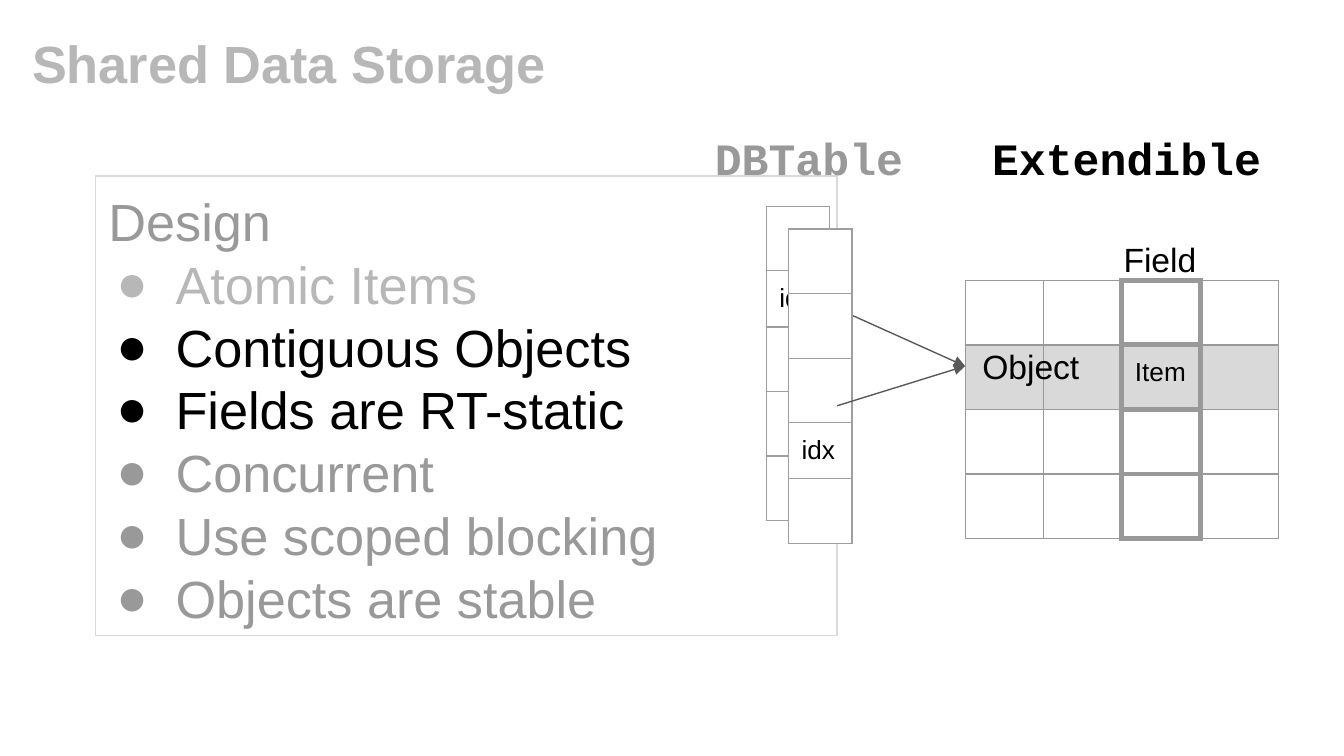
"""Build the Shared Data Storage slide with its design list and table diagram."""
from lxml import etree
from pptx import Presentation
from pptx.dml.color import RGBColor
from pptx.enum.shapes import MSO_CONNECTOR, MSO_SHAPE
from pptx.enum.text import MSO_ANCHOR, PP_ALIGN
from pptx.oxml.ns import qn
from pptx.util import Cm, Pt

STRAIGHT, RECTANGLE = MSO_CONNECTOR.STRAIGHT, MSO_SHAPE.RECTANGLE
TOP, MIDDLE = MSO_ANCHOR.TOP, MSO_ANCHOR.MIDDLE
LEFT, RIGHT = PP_ALIGN.LEFT, PP_ALIGN.RIGHT
BLACK, GRAY, PALE, LIGHT = "000000", "999999", "B7B7B7", "D9D9D9"
INDEX_LINE, ARROW_LINE, WHITE = "9E9E9E", "595959", "FFFFFF"
THIN, THICK = 0.75, 3
MARGIN, CELL_BOTTOM = 0.25, 0.19

TITLE = "Shared Data Storage"
DESIGN_HEADING = "Design"
DESIGN_POINTS = [
    ("Atomic Items", PALE),
    ("Contiguous Objects", BLACK),
    ("Fields are RT-static", BLACK),
    ("Concurrent", GRAY),
    ("Use scoped blocking", GRAY),
    ("Objects are stable", GRAY),
]
OBJECT_ROWS = [["", "", "", ""], ["", "", "Item", ""], ["", "", "", ""], ["", "", "", ""]]
OBJECT_ROW, FIELD_COLUMN = 1, 2
BACK_INDEX = ["", "idx", "", "", ""]
FRONT_INDEX = ["", "", "", "idx", ""]
ROW_HEIGHT, INDEX_ROW_HEIGHT = 1.22, 1.06
FIELD_WIDTH, INDEX_WIDTH = 1.48, 1.2


def rgb(color):
    return RGBColor.from_string(color)


def write(frame, text, size=18, color=BLACK, font="Arial", bold=False, align=LEFT):
    first = frame.paragraphs[0]
    paragraph = frame.add_paragraph() if first.runs else first
    paragraph.alignment = align
    run = paragraph.add_run()
    run.text = text
    run.font.size, run.font.name, run.font.bold = Pt(size), font, bold
    run.font.color.rgb = rgb(color)
    return paragraph


def set_margins(holder, bottom=MARGIN):
    holder.margin_left = holder.margin_right = holder.margin_top = Cm(MARGIN)
    holder.margin_bottom = Cm(bottom)


def add_label(slide, text, left, top, width, height, anchor=TOP, **style):
    label = slide.shapes.add_textbox(Cm(left), Cm(top), Cm(width), Cm(height))
    frame = label.text_frame
    frame.word_wrap = True
    frame.vertical_anchor = anchor
    set_margins(frame)
    write(frame, text, **style)
    return label


def add_bullet(paragraph, color):
    properties = paragraph._p.get_or_add_pPr()
    properties.set("marL", str(Cm(1.27)))
    properties.set("indent", str(Cm(-1.12)))
    bullet_color = etree.SubElement(properties, qn("a:buClr"))
    etree.SubElement(bullet_color, qn("a:srgbClr"), val=color)
    etree.SubElement(properties, qn("a:buFont"), typeface="Arial")
    etree.SubElement(properties, qn("a:buChar"), char="●")


def set_borders(cell, color, thick_sides):
    properties = cell._tc.get_or_add_tcPr()
    for position, side in enumerate("LRTB"):
        width = THICK if side in thick_sides else THIN
        border = etree.Element(qn(f"a:ln{side}"), w=str(Pt(width)))
        fill = etree.SubElement(border, qn("a:solidFill"))
        etree.SubElement(fill, qn("a:srgbClr"), val=color)
        properties.insert(position, border)


def add_grid(slide, rows, left, top, column_width, line, fill_of, thick_of):
    heights = [INDEX_ROW_HEIGHT if "idx" in row else ROW_HEIGHT for row in rows]
    columns = len(rows[0])
    frame = slide.shapes.add_table(len(rows), columns, Cm(left), Cm(top),
                                   Cm(column_width * columns), Cm(sum(heights)))
    grid = frame.table
    grid.first_row = grid.horz_banding = False
    for column in grid.columns:
        column.width = Cm(column_width)
    for r, (row, height) in enumerate(zip(rows, heights)):
        grid.rows[r].height = Cm(height)
        for c, text in enumerate(row):
            cell = grid.cell(r, c)
            set_margins(cell, bottom=CELL_BOTTOM)
            if text:
                write(cell.text_frame, text, size=14)
            fill = fill_of(r)
            if fill:
                cell.fill.solid()
                cell.fill.fore_color.rgb = rgb(fill)
            else:
                cell.fill.background()
            set_borders(cell, line, thick_of(c))


def add_index(slide, entries, left, top, fill):
    add_grid(slide, [[entry] for entry in entries], left, top, INDEX_WIDTH,
             INDEX_LINE, lambda row: fill, lambda column: "")


def add_arrow(slide, left, top, target):
    arrow = slide.shapes.add_connector(STRAIGHT, Cm(left), Cm(top), target.left, target.top)
    arrow.end_connect(target, 1)
    arrow.line.color.rgb = rgb(ARROW_LINE)
    arrow.line.width = Pt(THIN)
    etree.SubElement(arrow.line._get_or_add_ln(), qn("a:tailEnd"), type="triangle")
    etree.SubElement(arrow._element.spPr, qn("a:effectLst"))


def add_design(slide):
    design = slide.shapes.add_shape(RECTANGLE, Cm(1.8), Cm(3.33), Cm(14.02), Cm(8.69))
    design.shadow.inherit = False
    design.fill.background()
    design.line.color.rgb = rgb(LIGHT)
    design.line.width = Pt(THIN)
    frame = design.text_frame
    frame.word_wrap = True
    frame.vertical_anchor = TOP
    set_margins(frame)
    write(frame, DESIGN_HEADING, size=28, color=GRAY)
    for point, color in DESIGN_POINTS:
        add_bullet(write(frame, point, size=28, color=color), color)


def main():
    deck = Presentation()
    deck.slide_width, deck.slide_height = Cm(25.4), Cm(14.29)
    slide = deck.slides.add_slide(deck.slide_layouts[6])

    thick_sides = {FIELD_COLUMN - 1: "R", FIELD_COLUMN: "LRTB", FIELD_COLUMN + 1: "L"}
    add_grid(slide, OBJECT_ROWS, 18.24, 5.3, FIELD_WIDTH, GRAY,
             lambda row: LIGHT if row == OBJECT_ROW else None,
             lambda column: thick_sides.get(column, ""))
    add_design(slide)
    add_label(slide, TITLE, 0.36, 0.34, 23.67, 1.6, size=28, color=PALE, bold=True)
    object_label = add_label(slide, "Object", 18.24, 6.4, 2.41, 1.04, anchor=MIDDLE, align=RIGHT)
    add_label(slide, "Field", 20.73, 4.27, 2.13, 1.04, align=RIGHT)
    add_index(slide, BACK_INDEX, 14.48, 3.9, None)
    add_arrow(slide, 15.57, 5.72, object_label)
    add_index(slide, FRONT_INDEX, 14.9, 4.33, WHITE)
    add_arrow(slide, 15.82, 7.67, object_label)
    for heading, left, width, color in [("DBTable", 13.26, 4.7, GRAY),
                                        ("Extendible", 18.5, 5.64, BLACK)]:
        add_label(slide, heading, left, 2.22, width, 1.83,
                  size=24, color=color, font="Courier New", bold=True)
    deck.save("out.pptx")


if __name__ == "__main__":
    main()
